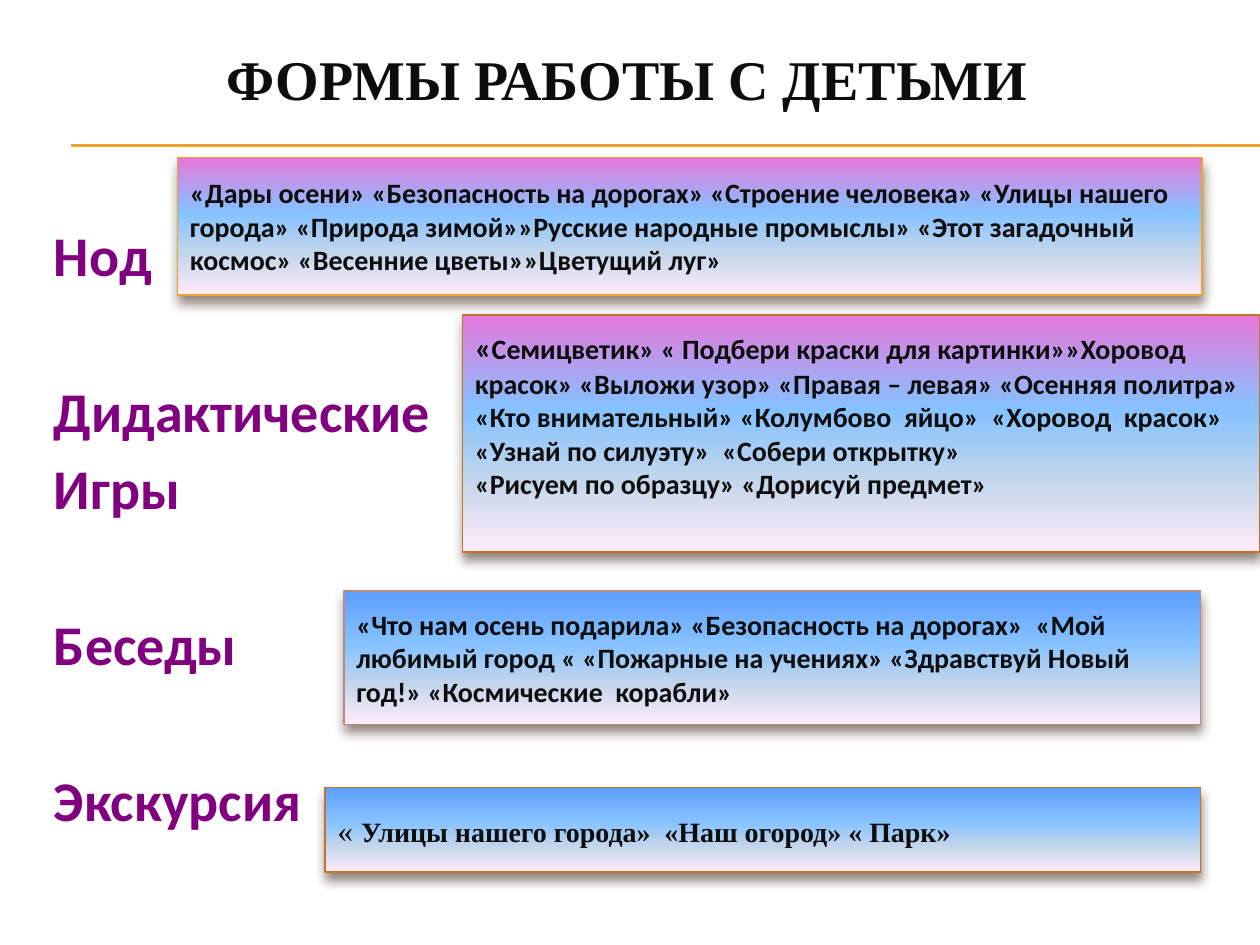
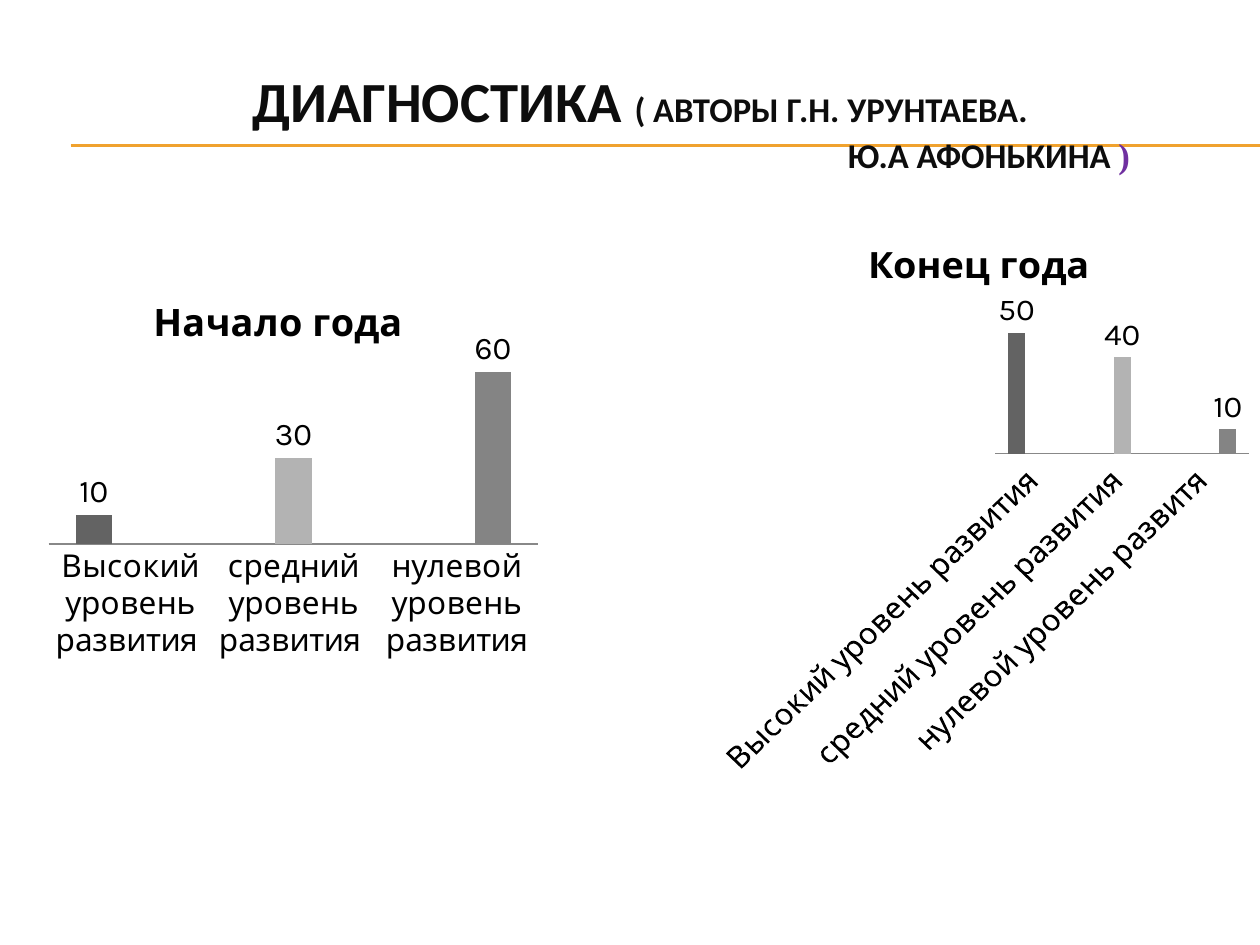
"""Builds two slides on work with children: activity forms and diagnostics."""
from lxml.etree import SubElement
from pptx import Presentation
from pptx.chart.data import CategoryChartData
from pptx.dml.color import RGBColor
from pptx.enum.chart import XL_CHART_TYPE, XL_LABEL_POSITION, XL_TICK_MARK
from pptx.enum.shapes import MSO_CONNECTOR, MSO_SHAPE
from pptx.enum.text import MSO_ANCHOR, PP_ALIGN
from pptx.oxml.ns import qn
from pptx.util import Inches, Pt

INK = RGBColor(0x0D, 0x0D, 0x0D)
BLACK = RGBColor(0, 0, 0)
PURPLE = RGBColor(0x80, 0x00, 0x80)
VIOLET = RGBColor(0x70, 0x30, 0xA0)
AMBER = RGBColor(0xF0, 0xA2, 0x2E)
BROWN = RGBColor(0xC1, 0x75, 0x29)
ROSE = RGBColor(0xB5, 0x8B, 0x80)
PINK = RGBColor(0xE7, 0x77, 0xDA)
BLUE = RGBColor(0x5E, 0x9E, 0xFF)
SHADOW = RGBColor(0x4E, 0x3B, 0x30)
AXIS = RGBColor(0x88, 0x88, 0x88)
LOWER_STOPS = [(40, RGBColor(0x85, 0xC2, 0xFF)), (70, RGBColor(0xC4, 0xD6, 0xEB)),
               (100, RGBColor(0xFF, 0xEB, 0xFA))]
BAR_COLOURS = [RGBColor(0x63, 0x63, 0x63), RGBColor(0xB3, 0xB3, 0xB3), RGBColor(0x84, 0x84, 0x84)]

SANS, SERIF, CHART_FONT = "Calibri", "Times New Roman", "Karla"

FORMS_TITLE = [[("ФОРМЫ РАБОТЫ С ДЕТЬМИ", 32, SERIF, True, INK)]]
DIAGNOSTICS_TITLE = [
    [("ДИАГНОСТИКА ", 32.4, SANS, True, INK), ("( АВТОРЫ Г.Н. УРУНТАЕВА.", 19.8, SANS, True, INK)],
    [("Ю.А АФОНЬКИНА ", 19.8, SANS, True, INK), (")", 19.8, SERIF, True, VIOLET)],
]

LINE_GAP, GROUP_GAP = 5.8, 50.6
FORM_LABELS = [("Нод", 0), ("Дидактические", GROUP_GAP), ("Игры", LINE_GAP),
               ("Беседы", GROUP_GAP), ("Экскурсия", GROUP_GAP)]

FORM_BOXES = [
    {"at": (1.41, 1.25, 8.13, 1.09), "top": PINK, "border": AMBER, "text": [[
        ("«Дары осени» «Безопасность на дорогах» «Строение человека» «Улицы нашего города» "
         "«Природа зимой»»Русские народные промыслы» «Этот загадочный космос» "
         "«Весенние цветы»»Цветущий луг»", 16, SANS, True, INK)]]},
    {"at": (3.67, 2.5, 6.33, 1.88), "top": PINK, "border": BROWN, "bottom_inset": 0.35, "text": [
        [("«", 18, SANS, True, INK),
         ("Семицветик» « Подбери краски для картинки»»Хоровод красок» «Выложи узор» "
          "«Правая – левая» «Осенняя политра» «Кто внимательный» «Колумбово  яйцо»  "
          "«Хоровод  красок»  «Узнай по силуэту»  «Собери открытку»", 16, SANS, True, INK)],
        [("«Рисуем по образцу» «Дорисуй предмет»", 16, SANS, True, INK)]]},
    {"at": (2.73, 4.69, 6.8, 1.06), "top": BLUE, "border": ROSE, "text": [[
        ("«Что нам осень подарила» «Безопасность на дорогах»  «Мой любимый город « "
         "«Пожарные на учениях» «Здравствуй Новый год!» «Космические  корабли»",
         16, SANS, True, INK)]]},
    {"at": (2.58, 6.25, 6.95, 0.67), "top": BLUE, "border": BROWN, "text": [[
        ("« ", 18, SERIF, False, INK),
        ("Улицы нашего города»  «Наш огород» « Парк»", 16, SERIF, True, INK)]]},
]

CHARTS = [
    {"at": (0.31, 2.19, 4.74, 3.59), "title": "Начало года ", "values": (10, 30, 60),
     "levels": ("Высокий уровень развития ", "средний уровень развития ", "нулевой уровень развития"),
     "title_layout": {"x": 0.18, "y": 0.03},
     "plot_layout": {"x": 0.016, "y": 0.149, "w": 0.82, "h": 0.444}},
    {"at": (5.62, 1.72, 4.38, 4.44), "title": "Конец года ", "values": (50, 40, 10),
     "levels": ("Высокий уровень развития ", "средний уровень развития ", "нулевой уровень развитя "),
     "overlap": -25, "label_turn": -45},
]


def inches(lengths):
    return [Inches(length) for length in lengths]


def format_font(font, size, name, bold, colour):
    font.size, font.name, font.bold = Pt(size), name, bold
    font.color.rgb = colour


def write(text_frame, paragraphs, alignment):
    text_frame.word_wrap = True
    text_frame.vertical_anchor = MSO_ANCHOR.MIDDLE
    for index, runs in enumerate(paragraphs):
        paragraph = text_frame.add_paragraph() if index else text_frame.paragraphs[0]
        paragraph.alignment = alignment
        for text, *style in runs:
            run = paragraph.add_run()
            run.text = text
            format_font(run.font, *style)


def add_titled_slide(presentation, title, top, left):
    slide = presentation.slides.add_slide(presentation.slide_layouts[6])
    for height in (1.15, 1.16):
        rule = slide.shapes.add_connector(MSO_CONNECTOR.STRAIGHT, *inches((0.56, height, 10, height)))
        rule.line.color.rgb = AMBER
        rule.line.width = Pt(0.75)
        SubElement(rule._element.spPr, qn("a:effectLst"))
    title_box = slide.shapes.add_textbox(*inches((left, top, 9.5, 0.92)))
    write(title_box.text_frame, title, PP_ALIGN.CENTER)
    return slide, title_box


def add_colour(parent, colour):
    return SubElement(parent, qn("a:srgbClr"), val=str(colour))


def add_form_box(slide, box):
    shape = slide.shapes.add_shape(MSO_SHAPE.FLOWCHART_PROCESS, *inches(box["at"]))
    shape.fill.gradient()
    shape.fill.gradient_angle = 270
    properties = shape._element.spPr
    stops = properties.find(".//" + qn("a:gsLst"))
    for stop in list(stops):
        stops.remove(stop)
    for position, colour in [(0, box["top"])] + LOWER_STOPS:
        add_colour(SubElement(stops, qn("a:gs"), pos=str(position * 1000)), colour)
    shape.line.color.rgb = box["border"]
    shape.line.width = Pt(0.79)
    shape.shadow.inherit = False
    shadow = SubElement(properties.find(qn("a:effectLst")), qn("a:outerShdw"), rotWithShape="0",
                        blurRad=str(Pt(6)), dist=str(Pt(4)), dir="5400000")
    SubElement(add_colour(shadow, SHADOW), qn("a:alpha"), val="60000")
    shape.text_frame.margin_bottom = Inches(box.get("bottom_inset", 0.05))
    write(shape.text_frame, box["text"], PP_ALIGN.LEFT)


def add_form_labels(slide):
    text_frame = slide.shapes.add_textbox(*inches((0.33, 1.7, 9.5, 4.95))).text_frame
    text_frame.word_wrap = True
    for index, (label, gap) in enumerate(FORM_LABELS):
        paragraph = text_frame.add_paragraph() if index else text_frame.paragraphs[0]
        paragraph.text = label
        paragraph.space_before = Pt(gap)
        format_font(paragraph.runs[0].font, 32, SANS, True, PURPLE)


def place(element, layout, inner=False):
    """Gives a chart title or plot area a fixed place, as shares of the chart."""
    holder = element.find(qn("c:layout"))
    if holder is None:
        holder = element.makeelement(qn("c:layout"))
        text = element.find(qn("c:tx"))
        element.insert(0 if text is None else element.index(text) + 1, holder)
    manual = SubElement(holder, qn("c:manualLayout"))
    if inner:
        SubElement(manual, qn("c:layoutTarget"), val="inner")
    for key in ("x", "y"):
        SubElement(manual, qn(f"c:{key}Mode"), val="edge")
    for key, share in layout.items():
        SubElement(manual, qn(f"c:{key}"), val=str(share))


def add_level_chart(slide, details):
    data = CategoryChartData()
    data.categories = details["levels"]
    for index, value in enumerate(details["values"]):
        row = [None] * len(details["levels"])
        row[index] = value
        data.add_series(f"Series {index + 1}", row)
    chart = slide.shapes.add_chart(XL_CHART_TYPE.COLUMN_CLUSTERED, *inches(details["at"]), data).chart
    format_font(chart.font, 18, CHART_FONT, False, BLACK)
    chart.has_legend = False
    chart.has_title = True
    chart.chart_title.text_frame.text = details["title"]
    format_font(chart.chart_title.text_frame.paragraphs[0].runs[0].font, 21.6, CHART_FONT, True, BLACK)
    chart.chart_title.include_in_layout = False

    chart.value_axis.visible = False
    chart.value_axis.has_major_gridlines = False
    levels_axis = chart.category_axis
    levels_axis.major_tick_mark = XL_TICK_MARK.NONE
    levels_axis.format.line.color.rgb = AXIS
    if "label_turn" in details:
        format_font(levels_axis.tick_labels.font, 18, CHART_FONT, False, BLACK)
        body = levels_axis._element.find(qn("c:txPr")).find(qn("a:bodyPr"))
        body.set("rot", str(details["label_turn"] * 60000))

    plot = chart.plots[0]
    plot.vary_by_categories = False
    plot.gap_width = 150
    plot.overlap = details.get("overlap", 0)
    for series, colour in zip(plot.series, BAR_COLOURS):
        series.format.fill.solid()
        series.format.fill.fore_color.rgb = colour
        series.data_labels.show_value = True
        series.data_labels.position = XL_LABEL_POSITION.OUTSIDE_END
    if "plot_layout" in details:
        place(chart.chart_title._element, details["title_layout"])
        place(chart._chartSpace.chart.plotArea, details["plot_layout"], inner=True)


def main():
    presentation = Presentation()
    presentation.slide_width, presentation.slide_height = Inches(10), Inches(7.5)

    forms_slide, _ = add_titled_slide(presentation, FORMS_TITLE, top=0.16, left=0.23)
    add_form_labels(forms_slide)
    for box in FORM_BOXES:
        add_form_box(forms_slide, box)

    diagnostics_slide, title_box = add_titled_slide(presentation, DIAGNOSTICS_TITLE, top=0.5, left=0.33)
    authors = title_box.text_frame.paragraphs[1]
    authors.alignment = PP_ALIGN.LEFT
    authors._p.get_or_add_pPr().set("marL", str(Inches(6.3)))
    for details in CHARTS:
        add_level_chart(diagnostics_slide, details)

    presentation.save("out.pptx")


if __name__ == "__main__":
    main()
